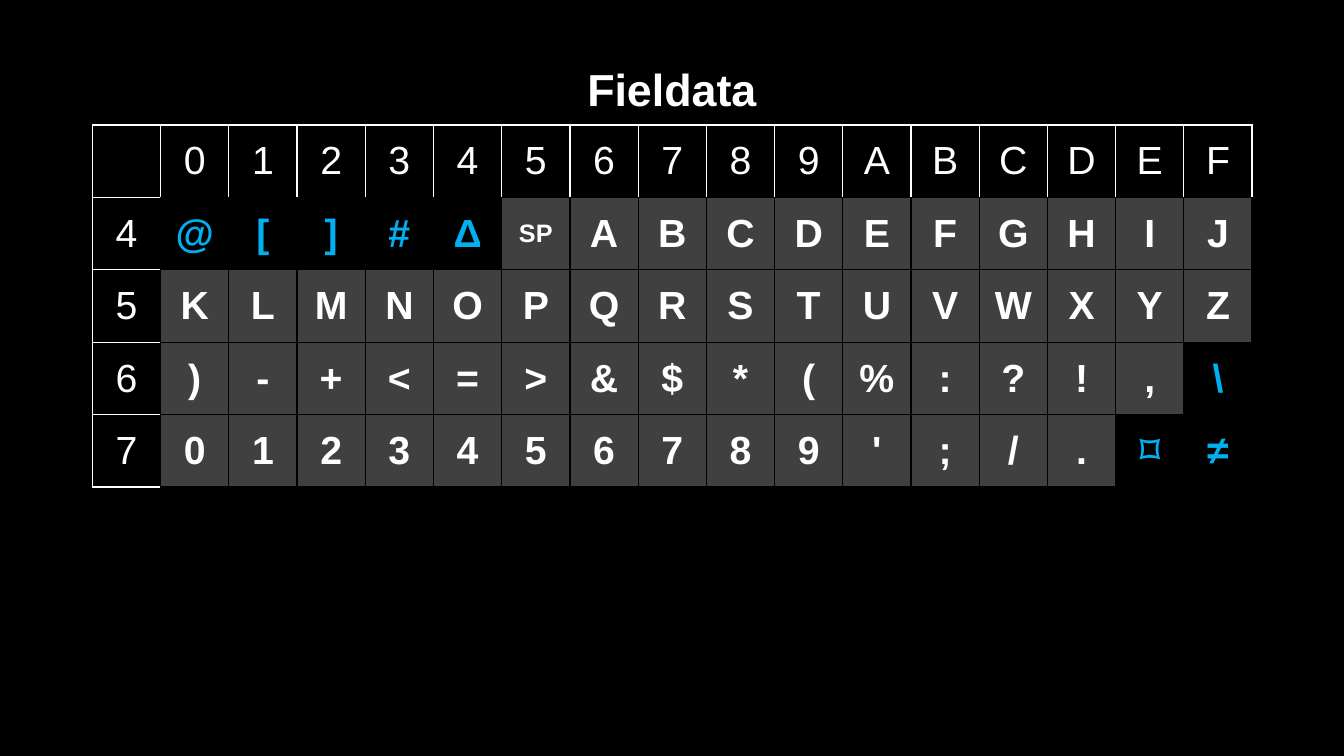
"""Draw the Fieldata character set as a code chart on one slide."""
from dataclasses import dataclass

from lxml import etree
from pptx import Presentation
from pptx.dml.color import RGBColor
from pptx.enum.text import MSO_ANCHOR, MSO_AUTO_SIZE, PP_ALIGN
from pptx.oxml.ns import qn
from pptx.util import Emu, Pt

MIDDLE = MSO_ANCHOR.MIDDLE
CENTER = PP_ALIGN.CENTER
GROW = MSO_AUTO_SIZE.SHAPE_TO_FIT_TEXT

EMU_PER_PX = 9525
SLIDE_W, SLIDE_H = 1280, 720
TITLE_TOP, TITLE_H = 54, 61
TABLE_LEFT, TABLE_TOP = 88, 119
COL_W, ROW_H = 65, 69
FONT = "Arial"
COLORS = {
    "black": "000000",
    "white": "FFFFFF",
    "gray": "404040",
    "blue": "00B0F0",
}
COLUMN_DIGITS = "0123456789ABCDEF"
CODE_ROWS = {
    "4": ["@", "[", "]", "#", "Δ", "SP", *"ABCDEFGHIJ"],
    "5": [*"KLMNOPQRSTUVWXYZ"],
    "6": [*")-+<=>&$*(%:?!,\\"],
    "7": [*"0123456789';/.⌑≠"],
}
HIGHLIGHTED = "@[]#Δ\\⌑≠"


@dataclass(frozen=True)
class Glyph:
    text: str
    color: str = "white"
    fill: str = "black"
    size: int = 28
    bold: bool = False
    borders: tuple[str, ...] = ()


def px(n: int) -> Emu:
    return Emu(n * EMU_PER_PX)


def rgb(name: str) -> RGBColor:
    return RGBColor.from_string(COLORS[name])


def code_glyph(text: str) -> Glyph:
    special = text in HIGHLIGHTED
    return Glyph(
        text,
        color="blue" if special else "white",
        fill="black" if special else "gray",
        size=18 if text == "SP" else 28,
        bold=True,
        borders=("lnL", "lnR", "lnT", "lnB"),
    )


def chart_grid() -> list[list[Glyph]]:
    header = [Glyph("")] + [Glyph(d, borders=("lnB",)) for d in COLUMN_DIGITS]
    body = [
        [Glyph(label, borders=("lnR",))] + [code_glyph(c) for c in chars]
        for label, chars in CODE_ROWS.items()
    ]
    return [header, *body]


def add_text(tf, glyph: Glyph) -> None:
    p = tf.paragraphs[0]
    p.alignment = CENTER
    if not glyph.text:
        return
    r = p.add_run()
    r.text = glyph.text
    r.font.name = FONT
    r.font.size = Pt(glyph.size)
    r.font.bold = glyph.bold
    r.font.color.rgb = rgb(glyph.color)


def add_border(cell, side: str) -> None:
    tc_pr = cell._tc.get_or_add_tcPr()
    ln = etree.SubElement(tc_pr, qn(f"a:{side}"), w=str(Pt(1)))
    fill = etree.SubElement(ln, qn("a:solidFill"))
    etree.SubElement(fill, qn("a:srgbClr"), val=COLORS["black"])


def draw_cell(cell, glyph: Glyph) -> None:
    for side in glyph.borders:
        add_border(cell, side)
    cell.fill.solid()
    cell.fill.fore_color.rgb = rgb(glyph.fill)
    cell.vertical_anchor = MIDDLE
    add_text(cell.text_frame, glyph)


def draw_table(s, grid: list[list[Glyph]]) -> None:
    rows, cols = len(grid), len(grid[0])
    table = s.shapes.add_table(
        rows, cols, px(TABLE_LEFT), px(TABLE_TOP), px(cols * COL_W), px(rows * ROW_H)
    ).table
    table.first_row = False
    table.horz_banding = False
    for i, glyphs in enumerate(grid):
        for j, glyph in enumerate(glyphs):
            draw_cell(table.cell(i, j), glyph)


def draw_title(s, title: Glyph) -> None:
    sp = s.shapes.add_textbox(px(0), px(TITLE_TOP), px(SLIDE_W), px(TITLE_H))
    tf = sp.text_frame
    tf.word_wrap = True
    tf.auto_size = GROW
    tf.vertical_anchor = MIDDLE
    add_text(tf, title)


def main() -> None:
    prs = Presentation()
    prs.slide_width, prs.slide_height = px(SLIDE_W), px(SLIDE_H)
    s = prs.slides.add_slide(prs.slide_layouts[6])
    s.background.fill.solid()
    s.background.fill.fore_color.rgb = rgb("black")
    draw_table(s, chart_grid())
    draw_title(s, Glyph("Fieldata", size=32, bold=True))
    prs.save("out.pptx")


if __name__ == "__main__":
    main()
